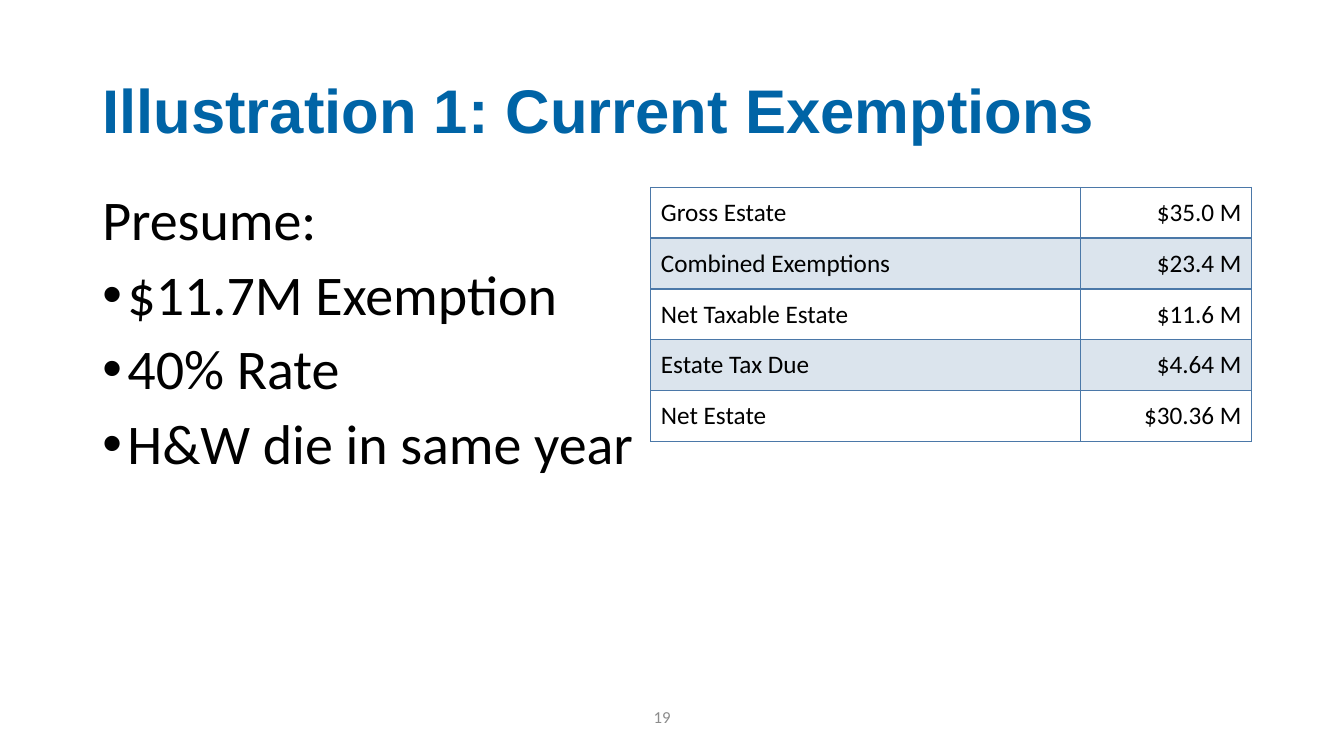
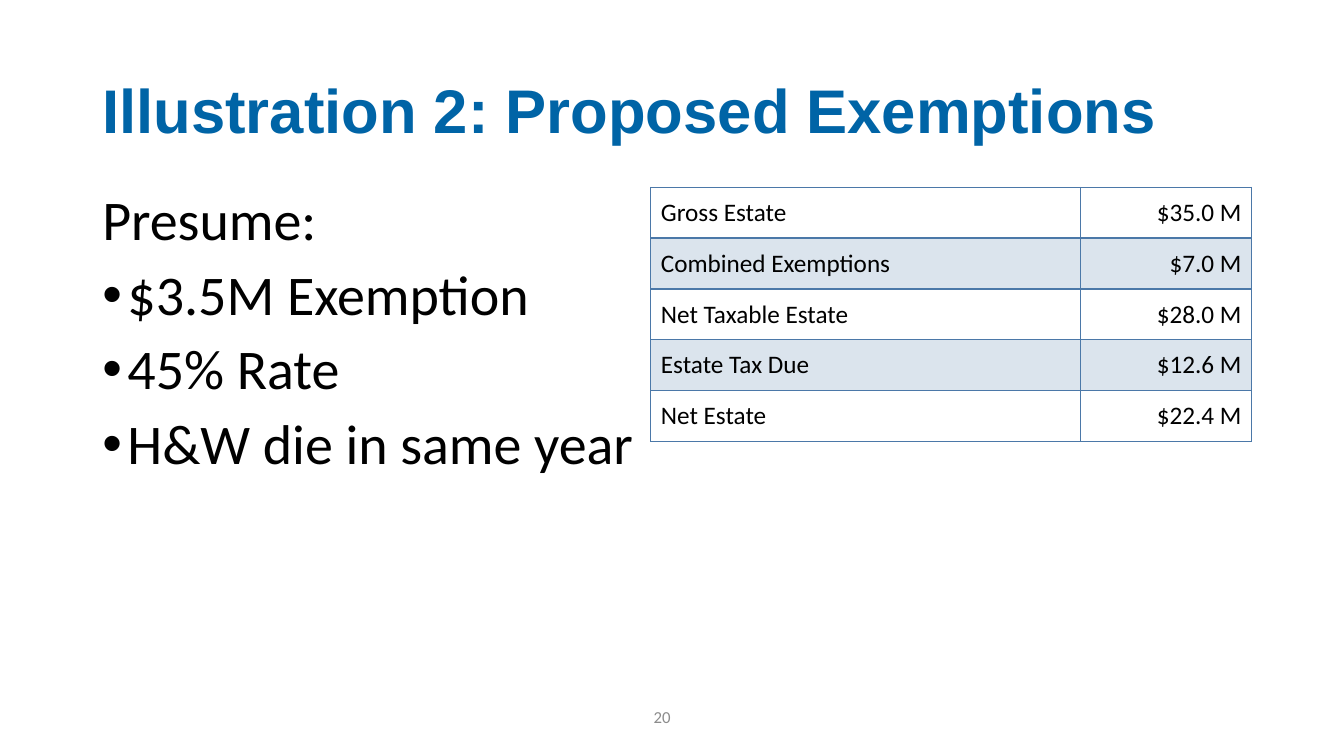
from dataclasses import dataclass

import pptx
import pptx.dml.color
import pptx.enum.text
import pptx.oxml
import pptx.oxml.ns
import pptx.presentation
import pptx.shapes.base
import pptx.slide
import pptx.table
import pptx.text.text
import pptx.util

Pt = pptx.util.Pt
Align = pptx.enum.text.PP_ALIGN
Anchor = pptx.enum.text.MSO_ANCHOR


@dataclass(frozen=True)
class Theme:
    heading: str = "0064A6"
    ink: str = "000000"
    muted: str = "8C8C8C"
    table_blue: str = "4B78A8"
    band_opacity: int = 20
    heading_font: str = "Arial"
    body_font: str = "Calibri"
    heading_size: float = 44
    body_size: float = 40
    table_size: float = 18
    page_size: float = 12
    line_spacing: float = 0.9
    paragraph_gap: float = 10
    bullet_indent: float = 18


@dataclass(frozen=True)
class Box:
    left: float
    top: float
    width: float
    height: float


@dataclass(frozen=True)
class Illustration:
    page: int
    heading: str
    assumptions: tuple[str, ...]
    amounts: tuple[str, ...]


THEME = Theme()

# Layout, in points
SLIDE_WIDTH, SLIDE_HEIGHT = 960, 540
HEADING_BOX = Box(66, 28.8, 828, 104.4)
ASSUMPTIONS_BOX = Box(66, 133.9, 410.4, 313.2)
ESTATE_BOX = Box(464.9, 133.9, 429.1, 181.5)
PAGE_BOX = Box(365, 497.5, 216, 28.8)
AMOUNT_WIDTH = 122.4

# Content
ESTATE_LINES = ("Gross Estate", "Combined Exemptions", "Net Taxable Estate",
                "Estate Tax Due", "Net Estate")
ILLUSTRATIONS = (
    Illustration(19, "Illustration 1: Current Exemptions",
                 ("$11.7M Exemption", "40% Rate", "H&W die in same year"),
                 ("$35.0 M", "$23.4 M", "$11.6 M", "$4.64 M", "$30.36 M")),
    Illustration(20, "Illustration 2: Proposed Exemptions",
                 ("$3.5M Exemption", "45% Rate", "H&W die in same year"),
                 ("$35.0 M", "$7.0 M", "$28.0 M", "$12.6 M", "$22.4 M")),
)


def rgb(value: str) -> pptx.dml.color.RGBColor:
    return pptx.dml.color.RGBColor.from_string(value)


def write(paragraph: pptx.text.text._Paragraph, text: str, *, size: float,
          font: str = THEME.body_font, color: str = THEME.ink,
          bold: bool = False, align: Align = Align.LEFT,
          line_spacing: float = 1.0, space_before: float = 0,
          bullet: bool = False) -> None:
    """Put one formatted run of text into a paragraph."""
    paragraph.alignment = align
    paragraph.line_spacing = line_spacing
    paragraph.space_before = Pt(space_before)
    if bullet:
        properties = paragraph._p.get_or_add_pPr()
        indent = Pt(THEME.bullet_indent)
        properties.set("marL", str(indent))
        properties.set("indent", str(-indent))
        ns = pptx.oxml.ns.nsdecls("a")
        properties.append(pptx.oxml.parse_xml(f'<a:buFont {ns} typeface="Arial"/>'))
        properties.append(pptx.oxml.parse_xml(f'<a:buChar {ns} char="•"/>'))
    run = paragraph.add_run()
    run.text = text
    run.font.name = font
    run.font.size = Pt(size)
    run.font.bold = bold
    run.font.color.rgb = rgb(color)


def place(shape: pptx.shapes.base.BaseShape, box: Box) -> None:
    shape.left, shape.top = Pt(box.left), Pt(box.top)
    shape.width, shape.height = Pt(box.width), Pt(box.height)


def prepare_frame(frame: pptx.text.text.TextFrame, anchor: Anchor) -> None:
    frame.word_wrap = True
    frame.auto_size = pptx.enum.text.MSO_AUTO_SIZE.NONE
    frame.vertical_anchor = anchor


def add_frame(slide: pptx.slide.Slide, box: Box,
              anchor: Anchor) -> pptx.text.text.TextFrame:
    holder = slide.shapes.add_textbox(0, 0, 0, 0)
    place(holder, box)
    prepare_frame(holder.text_frame, anchor)
    return holder.text_frame


def add_heading(slide: pptx.slide.Slide, text: str) -> None:
    heading = slide.shapes.title
    place(heading, HEADING_BOX)
    prepare_frame(heading.text_frame, Anchor.MIDDLE)
    write(heading.text_frame.paragraphs[0], text, size=THEME.heading_size,
          font=THEME.heading_font, color=THEME.heading, bold=True,
          line_spacing=THEME.line_spacing)


def add_assumptions(slide: pptx.slide.Slide, assumptions: tuple[str, ...]) -> None:
    frame = add_frame(slide, ASSUMPTIONS_BOX, Anchor.TOP)
    write(frame.paragraphs[0], "Presume:", size=THEME.body_size,
          line_spacing=THEME.line_spacing)
    for assumption in assumptions:
        write(frame.add_paragraph(), assumption, size=THEME.body_size,
              line_spacing=THEME.line_spacing,
              space_before=THEME.paragraph_gap, bullet=True)


def style_cell(cell: pptx.table._Cell, row: int) -> None:
    """Tint odd rows and rule all sides, heavier below the first row."""
    cell.vertical_anchor = Anchor.MIDDLE
    properties = cell._tc.get_or_add_tcPr()
    ns = pptx.oxml.ns.nsdecls("a")
    if row % 2:
        cell.fill.solid()
        cell.fill.fore_color.rgb = rgb(THEME.table_blue)
        tint = properties.find(".//" + pptx.oxml.ns.qn("a:srgbClr"))
        tint.append(pptx.oxml.parse_xml(
            f'<a:alpha {ns} val="{THEME.band_opacity * 1000}"/>'))
    else:
        cell.fill.background()
    heavy_side = {0: "B", 1: "T"}.get(row)
    for position, side in enumerate("LRTB"):
        width = Pt(2 if side == heavy_side else 1)
        properties.insert(position, pptx.oxml.parse_xml(
            f'<a:ln{side} {ns} w="{width}"><a:solidFill>'
            f'<a:srgbClr val="{THEME.table_blue}"/></a:solidFill></a:ln{side}>'))


def add_estate_table(slide: pptx.slide.Slide, amounts: tuple[str, ...]) -> None:
    box = ESTATE_BOX
    estate = slide.shapes.add_table(len(ESTATE_LINES), 2, Pt(box.left), Pt(box.top),
                                    Pt(box.width), Pt(box.height)).table
    estate.first_row = estate.horz_banding = False
    estate.columns[0].width = Pt(box.width - AMOUNT_WIDTH)
    estate.columns[1].width = Pt(AMOUNT_WIDTH)
    for row, entry in enumerate(zip(ESTATE_LINES, amounts)):
        estate.rows[row].height = Pt(box.height / len(ESTATE_LINES))
        for column, align in enumerate((Align.LEFT, Align.RIGHT)):
            cell = estate.cell(row, column)
            style_cell(cell, row)
            write(cell.text_frame.paragraphs[0], entry[column],
                  size=THEME.table_size, align=align)


def add_page_number(slide: pptx.slide.Slide, page: int) -> None:
    frame = add_frame(slide, PAGE_BOX, Anchor.MIDDLE)
    write(frame.paragraphs[0], str(page), size=THEME.page_size,
          color=THEME.muted, align=Align.CENTER)


def add_illustration(deck: pptx.presentation.Presentation,
                     illustration: Illustration) -> None:
    slide = deck.slides.add_slide(deck.slide_layouts.get_by_name("Title Only"))
    add_heading(slide, illustration.heading)
    add_assumptions(slide, illustration.assumptions)
    add_estate_table(slide, illustration.amounts)
    add_page_number(slide, illustration.page)


def main() -> None:
    deck = pptx.Presentation()
    deck.slide_width, deck.slide_height = Pt(SLIDE_WIDTH), Pt(SLIDE_HEIGHT)
    for illustration in ILLUSTRATIONS:
        add_illustration(deck, illustration)
    deck.save("out.pptx")


if __name__ == "__main__":
    main()
